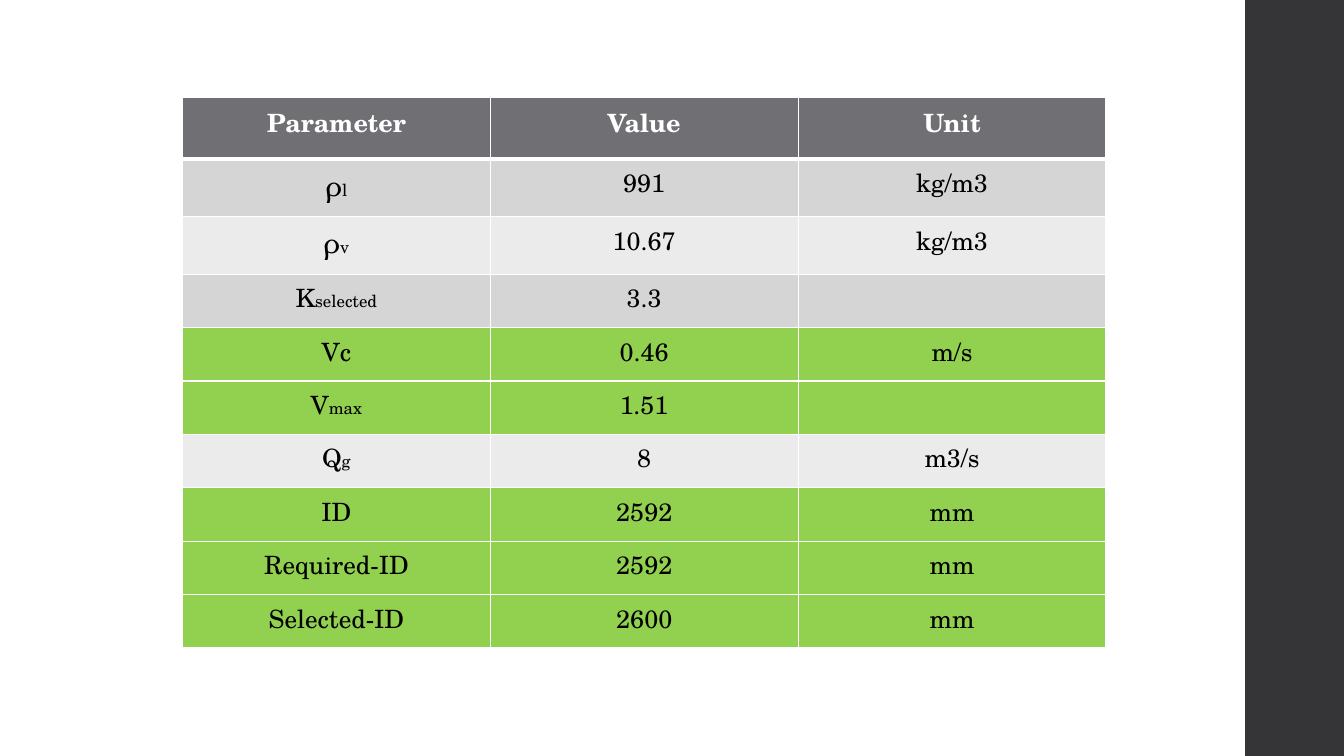
from lxml.etree import SubElement
from pptx import Presentation
from pptx.dml.color import RGBColor
from pptx.enum.shapes import MSO_SHAPE
from pptx.enum.text import PP_ALIGN
from pptx.oxml.ns import qn
from pptx.util import Inches, Pt

WHITE = RGBColor(0xFF, 0xFF, 0xFF)
BLACK = RGBColor(0, 0, 0)
CHARCOAL = RGBColor(0x35, 0x35, 0x37)
HEADER_GRAY = RGBColor(0x6F, 0x6F, 0x74)
DARK_BAND = RGBColor(0xD5, 0xD5, 0xD6)
LIGHT_BAND = RGBColor(0xEB, 0xEB, 0xEB)
RESULT_GREEN = RGBColor(0x92, 0xD0, 0x50)

FONT = "TeX Gyre Schola"
BODY_SIZE, SYMBOL_SIZE, SUBSCRIPT_SIZE = 18, 20, 12

HEADINGS = ("Parameter", "Value", "Unit")
PARAMETERS = [
    (("ρ", "l"), "991", "kg/m3", DARK_BAND),
    (("ρ", "v"), "10.67", "kg/m3", LIGHT_BAND),
    (("K", "selected"), "3.3", "", DARK_BAND),
    (("Vc",), "0.46", "m/s", RESULT_GREEN),
    (("V", "max"), "1.51", "", RESULT_GREEN),
    (("Q", "g"), "8", "m3/s", LIGHT_BAND),
    (("ID",), "2592", "mm", RESULT_GREEN),
    (("Required-ID",), "2592", "mm", RESULT_GREEN),
    (("Selected-ID",), "2600", "mm", RESULT_GREEN),
]
ROW_HEIGHTS = [0.61] + [0.57] * 2 + [0.53] * 7


def add_sidebar(slide, left, top, width, height):
    sidebar = slide.shapes.add_shape(
        MSO_SHAPE.RECTANGLE, Inches(left), Inches(top), Inches(width), Inches(height))
    sidebar.shadow.inherit = False
    sidebar.fill.solid()
    sidebar.fill.fore_color.rgb = CHARCOAL
    sidebar.line.fill.background()


def set_borders(cell, top_width, bottom_width):
    properties = cell._tc.get_or_add_tcPr()
    widths = {"a:lnL": 1, "a:lnR": 1, "a:lnT": top_width, "a:lnB": bottom_width}
    for side, width in widths.items():
        border = SubElement(properties, qn(side), w=str(Pt(width)))
        paint = SubElement(border, qn("a:solidFill"))
        SubElement(paint, qn("a:srgbClr"), val=str(WHITE))


def write_cell(cell, parts, color, bold):
    paragraph = cell.text_frame.paragraphs[0]
    paragraph.alignment = PP_ALIGN.CENTER
    for position, part in enumerate(parts):
        run = paragraph.add_run()
        run.text = part
        size = SYMBOL_SIZE if part == "ρ" else BODY_SIZE
        run.font.size = Pt(SUBSCRIPT_SIZE if position else size)
        run.font.name = FONT
        run.font.bold = bold
        run.font.color.rgb = color


def add_parameter_table(slide, left, top, width):
    rows = [((heading,) for heading in HEADINGS)]
    rows += [(name, (value,), (unit,)) for name, value, unit, _ in PARAMETERS]
    fills = [HEADER_GRAY] + [fill for *_, fill in PARAMETERS]
    table = slide.shapes.add_table(
        len(rows), len(HEADINGS), Inches(left), Inches(top),
        Inches(width), Inches(sum(ROW_HEIGHTS))).table
    for row, height in zip(table.rows, ROW_HEIGHTS):
        row.height = Inches(height)
    for row_index, (entries, fill) in enumerate(zip(rows, fills)):
        is_header = row_index == 0
        for column_index, parts in enumerate(entries):
            cell = table.cell(row_index, column_index)
            set_borders(cell, 3 if row_index == 1 else 1, 3 if is_header else 1)
            cell.fill.solid()
            cell.fill.fore_color.rgb = fill
            write_cell(cell, filter(None, parts), WHITE if is_header else BLACK, is_header)


def main():
    presentation = Presentation()
    presentation.slide_width = Inches(13.33)
    presentation.slide_height = Inches(7.5)
    slide = presentation.slides.add_slide(presentation.slide_layouts[6])
    add_sidebar(slide, 12.35, 0, 0.98, 7.5)
    add_parameter_table(slide, 1.81, 0.97, 9.16)
    presentation.save("out.pptx")


if __name__ == "__main__":
    main()
